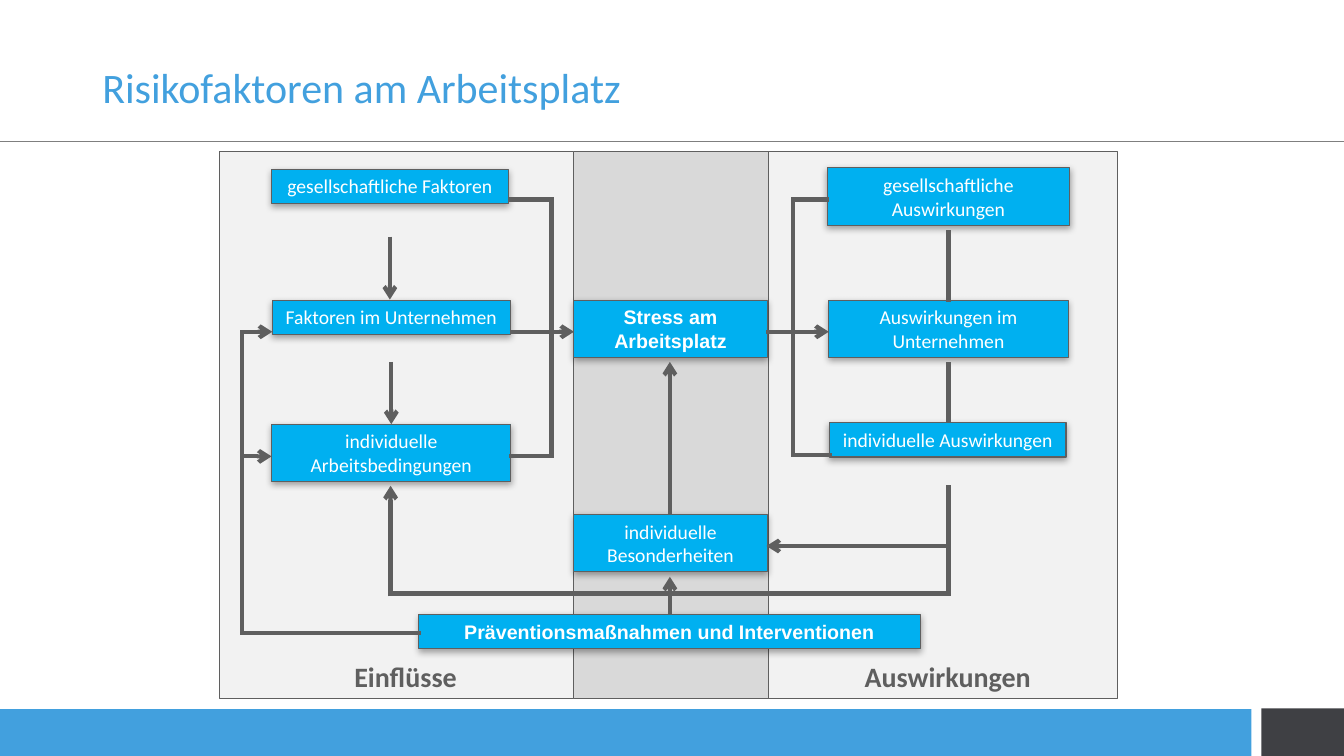
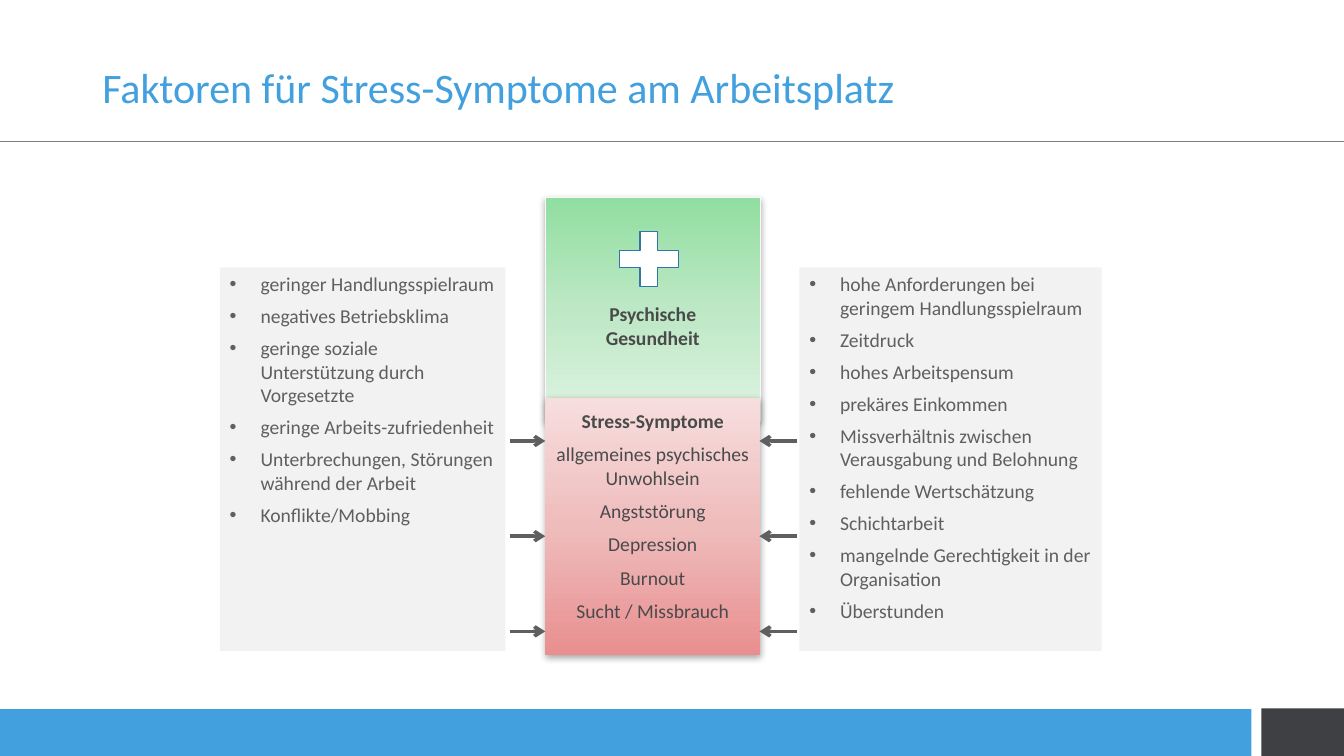
import pptx
import pptx.dml.color
import pptx.enum.dml
import pptx.enum.shapes
import pptx.enum.text
import pptx.oxml.ns
import pptx.util
import lxml.etree
import copy

Pt = pptx.util.Pt
RGB = pptx.dml.color.RGBColor.from_string
KIND = pptx.enum.shapes.MSO_SHAPE
ALIGN = pptx.enum.text.PP_ALIGN
qn = pptx.oxml.ns.qn

HUES = {
    "blue": "42A0DE", "dark": "3F4044", "rule": "7F7F7F", "cyan": "00B0F0",
    "grey": "5F5F5F", "pale": "F2F2F2", "mid": "D9D9D9", "white": "FFFFFF",
    "ink": "4A4A4B", "edge": "F9F9F9", "cross": "3176A4", "black": "000000",
}
GREEN = ["91DEA0", "BDE8C5", "DFF3E3"]
RED = ["F7DEDE", "EFBCBC", "E98F8F"]


def box(slide, area, fill=None, edge=None, lines=(), hue="grey", size=14,
        font="Calibri", bold=False, align=ALIGN.LEFT, gap=0, shade=False,
        kind=KIND.RECTANGLE, width=0.75):
    """Draw a shape, or a text box when there is no fill, with its text."""
    spot = [Pt(n) for n in area]
    if fill is None:
        shape = slide.shapes.add_textbox(*spot)
    else:
        shape = slide.shapes.add_shape(kind, *spot)
        shape.shadow.inherit = False
        if isinstance(fill, list):
            # Three colours from top to bottom
            shape.fill.gradient()
            shape.fill.gradient_angle = 270
            stops = shape._element.spPr.find(".//" + qn("a:gsLst"))
            stops.insert(1, copy.deepcopy(stops[0]))
            for i, stop in enumerate(shape.fill.gradient_stops):
                stop.position = i / 2
                stop.color.rgb = RGB(fill[i])
        else:
            shape.fill.solid()
            shape.fill.fore_color.rgb = RGB(HUES[fill])
        if edge:
            shape.line.color.rgb = RGB(HUES[edge])
            shape.line.width = Pt(width)
        else:
            shape.line.fill.background()
        if shade:
            list_ = shape._element.spPr.find(qn("a:effectLst"))
            cast = lxml.etree.SubElement(
                list_, qn("a:outerShdw"), blurRad=str(Pt(5)),
                dist=str(Pt(1.8)), dir="5400000", rotWithShape="0")
            tint = lxml.etree.SubElement(cast, qn("a:srgbClr"), val=HUES["black"])
            lxml.etree.SubElement(tint, qn("a:alpha"), val="35000")
    if lines:
        frame = shape.text_frame
        frame.word_wrap = True
        frame.vertical_anchor = pptx.enum.text.MSO_ANCHOR.TOP
        frame.text = "\n".join(lines)
        for i, para in enumerate(frame.paragraphs):
            para.alignment = align
            if i and gap:
                para.space_before = Pt(gap)
            for run in para.runs:
                run.font.name = font
                run.font.size = Pt(size)
                run.font.bold = bold
                run.font.color.rgb = RGB(HUES[hue])
    return shape


def link(slide, points, arrow=False, hue="grey", width=3):
    """Join the points with straight lines, with an arrowhead at the end."""
    for i, (start, end) in enumerate(zip(points, points[1:])):
        line = slide.shapes.add_connector(
            pptx.enum.shapes.MSO_CONNECTOR.STRAIGHT,
            *[Pt(n) for n in start + end])
        line.line.color.rgb = RGB(HUES[hue])
        line.line.width = Pt(width)
        lxml.etree.SubElement(line._element.spPr, qn("a:effectLst"))
        pen = line._element.spPr.find(qn("a:ln"))
        if arrow and i == len(points) - 2:
            lxml.etree.SubElement(pen, qn("a:tailEnd"), type="arrow")
        else:
            pen.set("cap", "sq")


deck = pptx.Presentation()
deck.slide_width = Pt(960)
deck.slide_height = Pt(540)

# Shared frame: bands, rule and title
pages = []
for title in ["Risikofaktoren am Arbeitsplatz",
              "Faktoren für Stress-Symptome am Arbeitsplatz"]:
    page = deck.slides.add_slide(deck.slide_layouts[6])
    box(page, (901, 506, 59, 34), "dark")
    box(page, (0, 506.5, 894, 33.5), "blue")
    link(page, [(0, 101), (960, 101)], hue="rule", width=0.5)
    head = box(page, (66, 29, 828, 71), lines=[title], hue="blue", size=30)
    head.text_frame.vertical_anchor = pptx.enum.text.MSO_ANCHOR.MIDDLE
    head.text_frame.paragraphs[0].line_spacing = 0.9
    pages.append(page)
risk, signs = pages

# Slide 1: three panels with captions
for left, wide, fill in [(410, 139, "mid"), (549, 249.5, "pale"),
                         (157, 253, "pale")]:
    box(risk, (left, 108, wide, 391), fill, "grey")
for left, wide, name in [(246, 92, "Einflüsse"), (610.5, 140, "Auswirkungen")]:
    box(risk, (left, 467.5, wide, 32), lines=[name], size=20, bold=True)

# Factor boxes: left, top, width, rows of text, wording, key box
LOW, TALL = 24.5, 41
for left, top, wide, high, text, key in [
    (194, 121, 169, LOW, "gesellschaftliche Faktoren", False),
    (194.5, 214.5, 170, LOW, "Faktoren im Unternehmen", False),
    (194, 303, 171, TALL, "individuelle Arbeitsbedingungen", False),
    (410, 214.5, 138, TALL, "Stress am Arbeitsplatz", True),
    (410, 367.5, 138, TALL, "individuelle Besonderheiten", False),
    (591, 120, 173, TALL, "gesellschaftliche Auswirkungen", False),
    (592, 214.5, 171, TALL, "Auswirkungen im Unternehmen", False),
    (592.5, 302, 169, LOW, "individuelle Auswirkungen", False),
    (299, 439, 358.5, LOW, "Präventionsmaßnahmen und Interventionen", True),
]:
    box(risk, (left, top, wide, high), "cyan", "grey", [text], "white",
        font="Arial" if key else "Calibri", bold=key, align=ALIGN.CENTER,
        shade=True)

# Plain lines
for route in [
    [(365, 142.5), (394, 142.5), (394, 325.5), (365, 325.5)],
    [(591, 142.5), (566.5, 142.5), (566.5, 325), (592.5, 325)],
    [(677.5, 214), (677.5, 166)],
    [(677.5, 301), (677.5, 260)],
    [(677.5, 348), (677.5, 424), (279, 424)],
]:
    link(risk, route)

# Arrows
for route in [
    [(278.5, 169), (278.5, 214)],
    [(279.5, 258.5), (279.5, 303)],
    [(279, 426), (279, 347)],
    [(478.5, 439), (478.5, 412)],
    [(478.5, 367.5), (478.5, 258.5)],
    [(675.5, 390), (547.5, 390)],
    [(547.5, 237), (592, 237)],
    [(364, 237), (410, 237)],
    [(299, 452), (173, 452), (173, 237), (194.5, 237)],
    [(173, 326), (194, 326)],
]:
    link(risk, route, arrow=True)

# Slide 2: health above, symptoms below
health = box(signs, (389.5, 141, 153.5, 160), GREEN, "edge",
             ["Psychische", "Gesundheit"], "ink", bold=True,
             align=ALIGN.CENTER, shade=True)
health.text_frame.margin_top = Pt(75)
stress = box(signs, (389.5, 284, 153.5, 184), RED, None,
             ["Stress-Symptome", "allgemeines psychisches Unwohlsein",
              "Angststörung", "Depression", "Burnout", "Sucht / Missbrauch"],
             "ink", align=ALIGN.CENTER, gap=7, shade=True)
stress.text_frame.margin_top = Pt(8)
stress.text_frame.paragraphs[0].runs[0].font.bold = True
box(signs, (435, 158.5, 57, 53), "white", "cross", kind=KIND.MATH_PLUS, width=1)

# Bulleted causes on both sides
for left, wide, items in [
    (157, 204, ["geringer Handlungsspielraum", "negatives Betriebsklima",
                "geringe soziale Unterstützung durch Vorgesetzte",
                "geringe Arbeits-zufriedenheit",
                "Unterbrechungen, Störungen während der Arbeit",
                "Konflikte/Mobbing"]),
    (571, 216, ["hohe Anforderungen bei geringem Handlungsspielraum",
                "Zeitdruck", "hohes Arbeitspensum", "prekäres Einkommen",
                "Missverhältnis zwischen Verausgabung und Belohnung",
                "fehlende Wertschätzung", "Schichtarbeit",
                "mangelnde Gerechtigkeit in der Organisation",
                "Überstunden"]),
]:
    cause = box(signs, (left, 191, wide, 274), "pale", lines=items, gap=6)
    for para in cause.text_frame.paragraphs:
        props = para._p.get_or_add_pPr()
        props.set("marL", str(Pt(22)))
        props.set("indent", str(-Pt(22)))
        lxml.etree.SubElement(props, qn("a:buFont"), typeface="Arial")
        lxml.etree.SubElement(props, qn("a:buChar"), char="•")

# Arrows towards the symptoms
for row in range(3):
    y = 315 + 68 * row
    for start, end in [(364, 389.5), (569, 542.5)]:
        link(signs, [(start, y), (end, y)], arrow=True, width=2.5)

deck.save("out.pptx")
